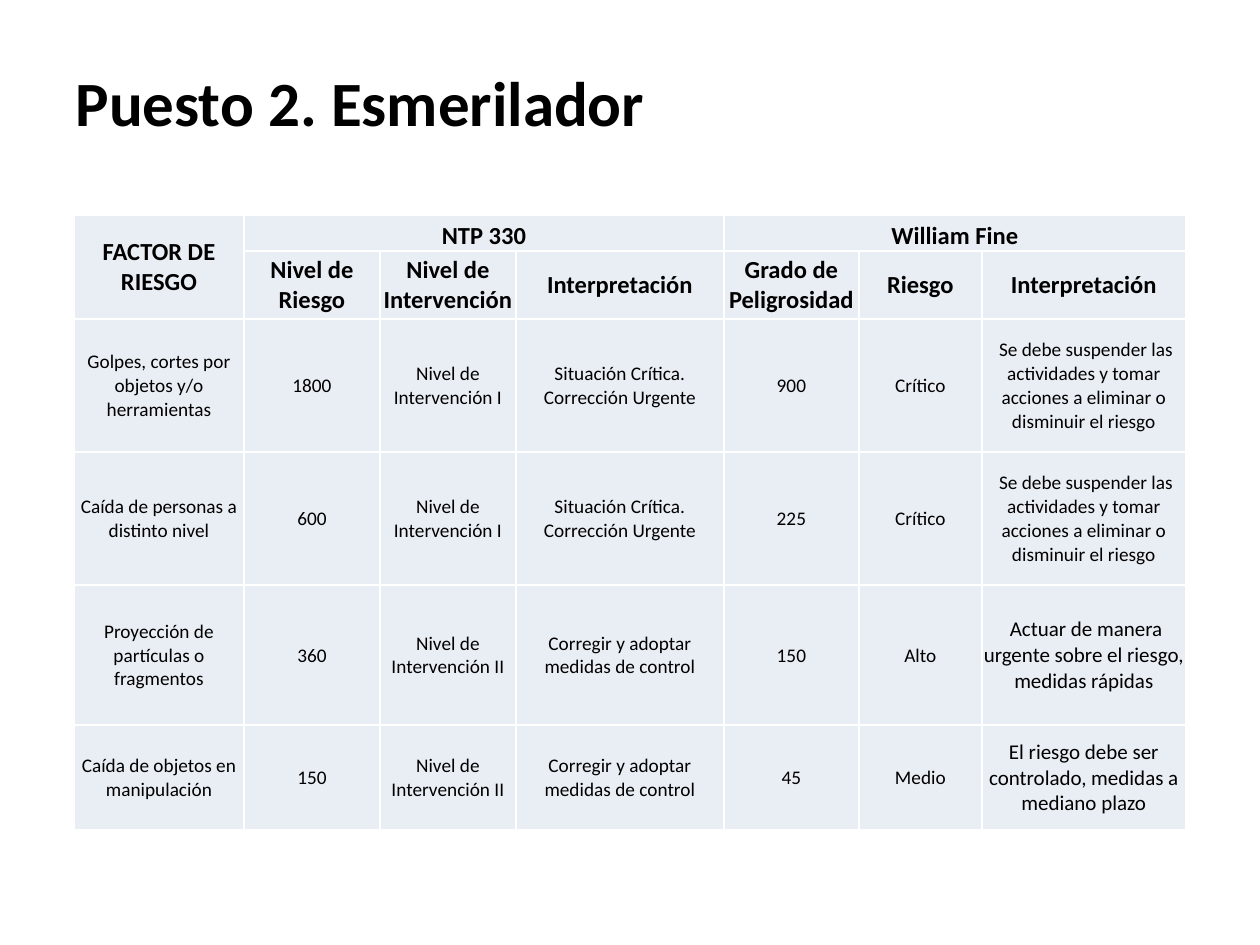
from dataclasses import dataclass

from lxml import etree
from pptx import Presentation
from pptx import util as u
from pptx.dml.color import RGBColor
from pptx.enum import text
from pptx.oxml import ns

PX_PER_INCH = 126
FONT = "Calibri"
BLACK, WHITE, PALE = "000000", "FFFFFF", "E9EDF4"
COLUMN_WIDTHS = [170, 136, 136, 208, 135, 123, 204]
ROW_HEIGHTS = [36, 68, 133, 133, 140, 105]
HEADINGS = [
    "FACTOR DE RIESGO", "Nivel de Riesgo", "Nivel de Intervención", "Interpretación",
    "Grado de Peligrosidad", "Riesgo", "Interpretación",
]
CRITICAL = "Situación Crítica. Corrección Urgente"
CORRECT = "Corregir y adoptar medidas de control"
SUSPEND = " Se debe suspender las actividades y tomar acciones a eliminar o disminuir el riesgo"


@dataclass
class Risk:
    factor: str
    level: int
    intervention: str
    ntp_meaning: str
    danger: int
    grade: str
    fine_meaning: str
    meaning_size: int


RISKS = [
    Risk("Golpes, cortes por objetos y/o herramientas", 1800, "I", CRITICAL,
         900, "Crítico", SUSPEND, 11),
    Risk("Caída de personas a distinto nivel", 600, "I", CRITICAL,
         225, "Crítico", SUSPEND, 11),
    Risk("Proyección de partículas o fragmentos", 360, "II", CORRECT,
         150, "Alto", " Actuar de manera urgente sobre el riesgo, medidas rápidas", 12),
    Risk("Caída de objetos en manipulación", 150, "II", CORRECT,
         45, "Medio", "El riesgo debe ser controlado, medidas a mediano plazo", 12),
]


def px(length: int) -> int:
    return round(length * u.Inches(1) / PX_PER_INCH)


def color(code: str) -> RGBColor:
    return RGBColor.from_string(code)


def write(paragraph, words: str, size: int, bold: bool, align) -> None:
    paragraph.text = words
    paragraph.alignment = align
    font = paragraph.font
    font.name, font.size, font.bold = FONT, u.Pt(size), bold
    font.color.rgb = color(BLACK)


def style_cell(cell) -> None:
    properties = cell._tc.get_or_add_tcPr()
    for side in ("a:lnL", "a:lnR", "a:lnT", "a:lnB"):
        line = etree.SubElement(properties, ns.qn(side), w=str(u.Pt(1)))
        fill = etree.SubElement(line, ns.qn("a:solidFill"))
        etree.SubElement(fill, ns.qn("a:srgbClr"), val=WHITE)
    cell.fill.solid()
    cell.fill.fore_color.rgb = color(PALE)
    cell.margin_left = cell.margin_right = cell.margin_top = px(1)
    cell.margin_bottom = 0
    cell.vertical_anchor = text.MSO_ANCHOR.MIDDLE


def fill_cell(cell, words: str, size: int = 11, bold: bool = False) -> None:
    write(cell.text_frame.paragraphs[0], words, size, bold, text.PP_ALIGN.CENTER)


def add_title(slide, words: str) -> None:
    title = slide.shapes.title
    title.left, title.top, title.width, title.height = map(px, (63, 38, 1134, 127))
    title.text_frame.vertical_anchor = text.MSO_ANCHOR.MIDDLE
    write(title.text_frame.paragraphs[0], words, 36, True, text.PP_ALIGN.LEFT)


def add_risk_table(slide) -> None:
    frame = slide.shapes.add_table(
        len(ROW_HEIGHTS), len(COLUMN_WIDTHS), px(74), px(215),
        px(sum(COLUMN_WIDTHS)), px(sum(ROW_HEIGHTS)))
    table = frame.table
    table.first_row = table.horz_banding = False
    for column, width in zip(table.columns, COLUMN_WIDTHS):
        column.width = px(width)
    for row, height in zip(table.rows, ROW_HEIGHTS):
        row.height = px(height)
    for cell in table.iter_cells():
        style_cell(cell)

    table.cell(0, 0).merge(table.cell(1, 0))
    for first, method in ((1, "NTP 330"), (4, "William Fine")):
        group = table.cell(0, first)
        group.merge(table.cell(0, first + 2))
        group.vertical_anchor = text.MSO_ANCHOR.BOTTOM
        fill_cell(group, method, 14, True)
    for column, heading in enumerate(HEADINGS):
        fill_cell(table.cell(0 if column == 0 else 1, column), heading, 14, True)

    for row, risk in enumerate(RISKS, start=2):
        entries = [
            risk.factor, str(risk.level), f"Nivel de Intervención {risk.intervention}",
            risk.ntp_meaning, str(risk.danger), risk.grade,
        ]
        for column, entry in enumerate(entries):
            fill_cell(table.cell(row, column), entry)
        fill_cell(table.cell(row, len(entries)), risk.fine_meaning, risk.meaning_size)


def main() -> None:
    deck = Presentation()
    deck.slide_width, deck.slide_height = u.Inches(10), u.Inches(7.5)
    slide = deck.slides.add_slide(deck.slide_layouts[5])
    add_title(slide, "Puesto 2. Esmerilador")
    add_risk_table(slide)
    deck.save("out.pptx")


if __name__ == "__main__":
    main()
